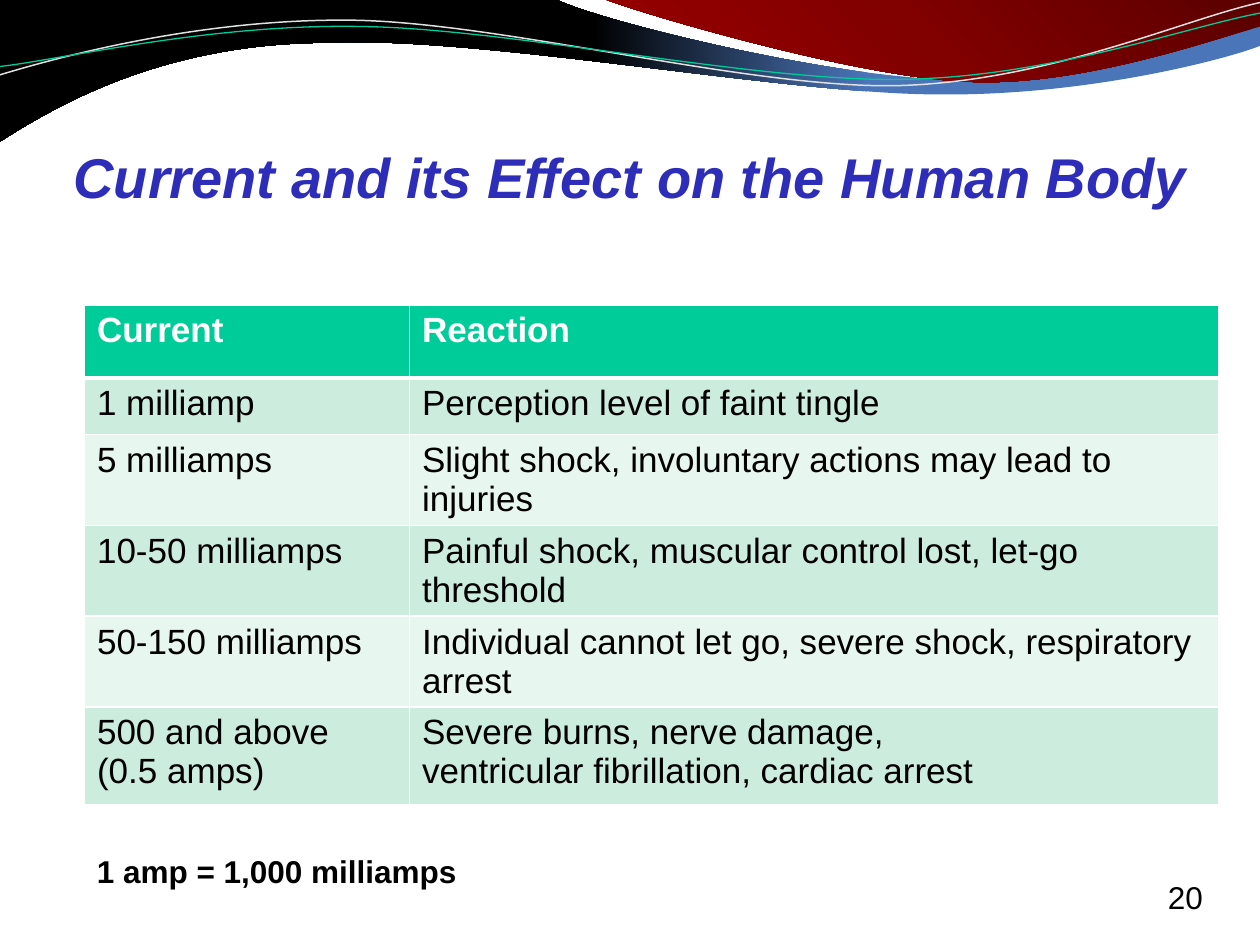
"""Build a slide with a table of electric current levels and their effect on the body."""
from lxml import etree
from pptx import Presentation
from pptx.dml.color import RGBColor
from pptx.enum.text import MSO_ANCHOR, MSO_AUTO_SIZE, PP_ALIGN
from pptx.oxml.ns import qn
from pptx.util import Cm, Pt

CENTER, LEFT = PP_ALIGN.CENTER, PP_ALIGN.LEFT
TOP, NO_FIT = MSO_ANCHOR.TOP, MSO_AUTO_SIZE.NONE
FONT = "Arial"
COLORS = {
    "title": "2D2DB9", "text": "000000", "white": "FFFFFF",
    "header": "00CC99", "band_dark": "CCECDE", "band_light": "E7F6EF",
    "silver": "E1E1E1", "green": "00CC99",
}

TITLE = "Current and its Effect on the Human Body"
ROWS = [
    ("Current", "Reaction"),
    ("1 milliamp", "Perception level of faint tingle"),
    ("5 milliamps", "Slight shock, involuntary actions may lead to injuries"),
    ("10-50 milliamps", "Painful shock, muscular control lost, let-go threshold"),
    ("50-150 milliamps", "Individual cannot let go, severe shock, respiratory arrest"),
    ("500 and above (0.5 amps)",
     "Severe burns, nerve damage,\nventricular fibrillation, cardiac arrest"),
]
COL_WIDTHS = [2.58, 6.42]
ROW_HEIGHTS = [0.58, 0.45, 0.45, 0.45, 0.45, 0.78]
HEADER_BORDERS = {"a:lnL": 1, "a:lnR": 1, "a:lnT": 1, "a:lnB": 3}
LABELS = [
    ("20", (9.17, 6.92, 0.67, 0.4), False),
    ("1 amp = 1,000 milliamps", (0.67, 6.71, 3.15, 0.4), True),
]

# Each step of an outline holds one point (line) or three points (curve).
BANDS = [
    {"start": (0, -0.01), "angle": 180,
     "stops": [(31, "4B75B9"), (53, "000000")],
     "steps": [
         [(4.4, -0.01)],
         [(4.76, 0.17), (6.64, 0.63), (7.58, 0.63)],
         [(8.53, 0.63), (9.58, 0.26), (10, 0.09)],
         [(10.01, 0.36)],
         [(9.83, 0.44), (8.7, 0.76), (7.46, 0.75)],
         [(6.22, 0.75), (3.82, 0.28), (2.57, 0.34)],
         [(1.29, 0.35), (0.46, 0.83), (-0.01, 1.13)],
         [(0, -0.01)]]},
    {"start": (4.79, -0.01), "angle": 225,
     "stops": [(0, "5B0000"), (50, "810000"), (100, "990000")],
     "steps": [
         [(5.09, 0.11), (6.82, 0.62), (7.69, 0.65)],
         [(8.56, 0.69), (9.61, 0.32), (10, 0.21)],
         [(10, 0)],
         [(4.79, -0.01)]]},
]
WAVES = [
    {"start": (-0.02, 0.6), "color": "silver", "width": 0.85,
     "steps": [
         [(0.47, 0.45), (1.58, 0.15), (2.77, 0.16)],
         [(3.96, 0.17), (5.91, 0.7), (7.11, 0.68)],
         [(8.32, 0.65), (9.4, 0.15), (10, 0.02)]]},
    {"start": (-0.02, 0.53), "color": "green", "width": 0.75,
     "steps": [
         [(0.46, 0.48), (1.64, 0.19), (2.84, 0.21)],
         [(4.03, 0.22), (5.96, 0.65), (7.16, 0.63)],
         [(8.35, 0.61), (9.42, 0.21), (10.02, 0.1)]]},
]


def inch(value):
    return Cm(value * 2.54)


def rgb(name):
    return RGBColor.from_string(COLORS[name])


def add_outline(slide, item, close):
    steps = item["steps"]
    builder = slide.shapes.build_freeform(*map(inch, item["start"]))
    builder.add_line_segments([(inch(x), inch(y)) for step in steps for x, y in step],
                              close=close)
    sp = builder.convert_to_shape()
    sp.shadow.inherit = False
    lines = iter(list(sp._element.iter(qn("a:lnTo"))))
    for step in steps:
        segment = [next(lines) for _ in step]
        if len(segment) == 3:
            curve = etree.Element(qn("a:cubicBezTo"))
            segment[0].addprevious(curve)
            for line in segment:
                curve.append(line[0])
                line.getparent().remove(line)
    return sp


def add_band(slide, band):
    sp = add_outline(slide, band, True)
    sp.line.fill.background()
    sp.fill.gradient()
    sp.fill.gradient_angle = band["angle"]
    stops = next(sp._element.spPr.iter(qn("a:gsLst")))
    for stop in list(stops):
        stops.remove(stop)
    for position, color in band["stops"]:
        stop = etree.SubElement(stops, qn("a:gs"), pos=str(position * 1000))
        etree.SubElement(stop, qn("a:srgbClr"), val=color)


def add_wave(slide, wave):
    sp = add_outline(slide, wave, False)
    sp.fill.background()
    sp.line.color.rgb = rgb(wave["color"])
    sp.line.width = Pt(wave["width"])


def write(tf, text, size, color, align=LEFT, **styles):
    tf.text = text
    for p in tf.paragraphs:
        p.alignment = align
        for r in p.runs:
            r.font.color.rgb = rgb(color)
            for name, value in {"name": FONT, "size": Pt(size), **styles}.items():
                setattr(r.font, name, value)


def add_title(slide):
    sp = slide.shapes.title
    sp.left, sp.top, sp.width, sp.height = map(inch, (0.42, 1.08, 9.17, 1))
    tf = sp.text_frame
    layout = {"word_wrap": True, "auto_size": NO_FIT, "vertical_anchor": TOP}
    for name, value in layout.items():
        setattr(tf, name, value)
    write(tf, TITLE, 32, "title", CENTER, bold=True, italic=True)


def add_borders(cell, borders):
    props = cell._tc.get_or_add_tcPr()
    for i, (tag, width) in enumerate(borders.items()):
        line = etree.Element(qn(tag), w=str(Pt(width)))
        fill = etree.SubElement(line, qn("a:solidFill"))
        etree.SubElement(fill, qn("a:srgbClr"), val=COLORS["white"])
        props.insert(i, line)


def add_table(slide):
    box = map(inch, (0.67, 2.42, sum(COL_WIDTHS), sum(ROW_HEIGHTS)))
    table = slide.shapes.add_table(len(ROWS), len(COL_WIDTHS), *box).table
    for column, width in zip(table.columns, COL_WIDTHS):
        column.width = inch(width)
    for i, (row, height, texts) in enumerate(zip(table.rows, ROW_HEIGHTS, ROWS)):
        row.height = inch(height)
        header = i == 0
        fill = "header" if header else "band_dark" if i % 2 else "band_light"
        for cell, text in zip(row.cells, texts):
            cell.fill.solid()
            cell.fill.fore_color.rgb = rgb(fill)
            write(cell.text_frame, text, 20, "white" if header else "text", bold=header)
            if header:
                add_borders(cell, HEADER_BORDERS)


def main():
    prs = Presentation()
    prs.slide_width, prs.slide_height = inch(10), inch(7.5)
    slide = prs.slides.add_slide(prs.slide_layouts[5])
    for band in BANDS:
        add_band(slide, band)
    for wave in WAVES:
        add_wave(slide, wave)
    add_title(slide)
    add_table(slide)
    for text, box, bold in LABELS:
        tf = slide.shapes.add_textbox(*map(inch, box)).text_frame
        tf.word_wrap = not bold
        write(tf, text, 18, "text", bold=bold)
    prs.save("out.pptx")


if __name__ == "__main__":
    main()
